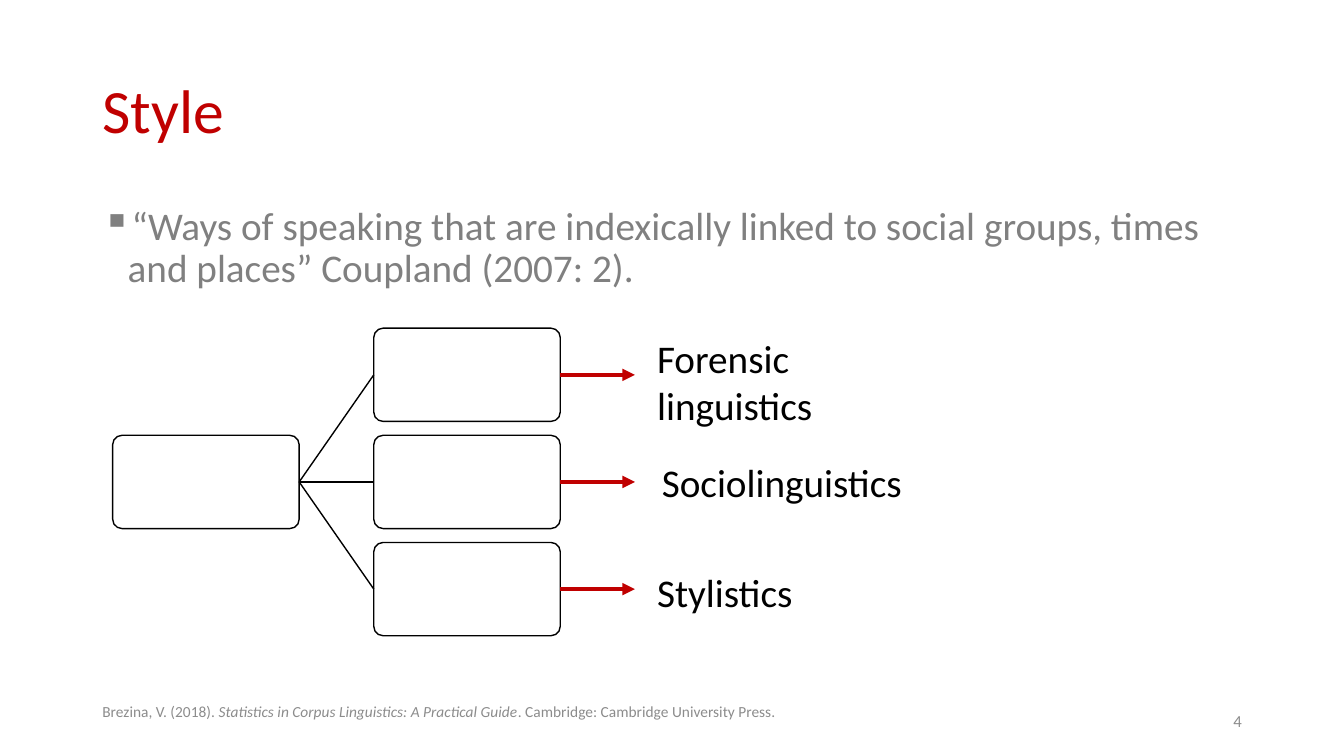
from lxml.etree import SubElement
from pptx import Presentation
from pptx.dml.color import RGBColor
from pptx.enum.shapes import MSO_CONNECTOR, MSO_SHAPE
from pptx.enum.text import MSO_ANCHOR, PP_ALIGN
from pptx.oxml.ns import qn
from pptx.util import Cm, Pt


def color(value):
    return RGBColor.from_string(value)


def add_text(bounds, runs, size, ink, frame_format={}, paragraph_format={}, bullet=None):
    frame = slide.shapes.add_textbox(*map(Cm, bounds)).text_frame
    paragraph = frame.paragraphs[0]
    for target, values in (
        (frame, {"word_wrap": True, **frame_format}),
        (paragraph, paragraph_format),
    ):
        for name, value in values.items():
            setattr(target, name, value)
    if bullet:
        properties = paragraph._p.get_or_add_pPr()
        properties.set("marL", str(Cm(0.64)))
        properties.set("indent", str(-Cm(0.64)))
        SubElement(properties, qn("a:buChar"), char=bullet)
    for words, italic in runs:
        run = paragraph.add_run()
        run.text = words
        for name, value in {"name": "Calibri", "size": Pt(size), "italic": italic}.items():
            setattr(run.font, name, value)
        run.font.color.rgb = color(ink)


presentation = Presentation()
presentation.slide_width = Cm(33.87)
presentation.slide_height = Cm(19.05)
slide = presentation.slides.add_slide(presentation.slide_layouts[6])

middle = {"vertical_anchor": MSO_ANCHOR.MIDDLE}
add_text((2.33, 1.02, 29.21, 3.68), [("Style", False)], 44, "C00000",
         middle, {"line_spacing": 0.9})
quotation = ("“Ways of speaking that are indexically linked to social groups, "
             "times and places” Coupland (2007: 2).")
add_text((2.33, 5.08, 29.21, 2.6), [(quotation, False)], 28, "808080",
         {}, {"line_spacing": 0.9}, "▪")
citation = [
    ("Brezina, V. (2018). ", False),
    ("Statistics in Corpus Linguistics: A Practical Guide", True),
    (". Cambridge: Cambridge University Press.", False),
]
add_text((2.33, 17.65, 20.32, 1.02), citation, 11, "8C8C8C", {"margin_top": Cm(0.05)})
add_text((23.93, 17.65, 7.62, 1.02), [("4", False)], 12, "8C8C8C",
         middle, {"alignment": PP_ALIGN.RIGHT})

box_width, box_height = 4.7, 2.35
first_top, row_step = 8.27, 2.7
root_left, branch_left = 2.84, 9.42
arrow_length = 1.88

boxes = []
for left, row in [(root_left, 1)] + [(branch_left, row) for row in range(3)]:
    box = slide.shapes.add_shape(
        MSO_SHAPE.ROUNDED_RECTANGLE, Cm(left), Cm(first_top + row * row_step),
        Cm(box_width), Cm(box_height))
    box.adjustments[0] = 0.1
    box.shadow.inherit = False
    box.fill.solid()
    box.fill.fore_color.rgb = color("FFFFFF")
    box.line.color.rgb = color("000000")
    box.line.width = Pt(1)
    boxes.append(box)
root, *branches = boxes

arrow_end = Cm(branch_left + box_width + arrow_length)
for branch in branches:
    center = branch.top + branch.height // 2
    for source, target, ink, width in (
        (root, branch, "000000", 1),
        (branch, None, "C00000", 3),
    ):
        link = slide.shapes.add_connector(
            MSO_CONNECTOR.STRAIGHT, source.left + source.width, center, arrow_end, center)
        link.begin_connect(source, 3)
        link.line.color.rgb = color(ink)
        link.line.width = Pt(width)
        if target:
            link.end_connect(target, 1)
        else:
            SubElement(link.line._get_or_add_ln(), qn("a:tailEnd"), type="triangle")
        SubElement(link._element.spPr, qn("a:effectLst"))

for field, bounds in (
    ("Forensic linguistics", (16.31, 8.31, 4.75, 2.64)),
    ("Sociolinguistics", (16.43, 11.43, 6.63, 1.45)),
    ("Stylistics", (16.31, 14.2, 4.75, 1.45)),
):
    add_text(bounds, [(field, False)], 28, "000000")

presentation.save("out.pptx")
